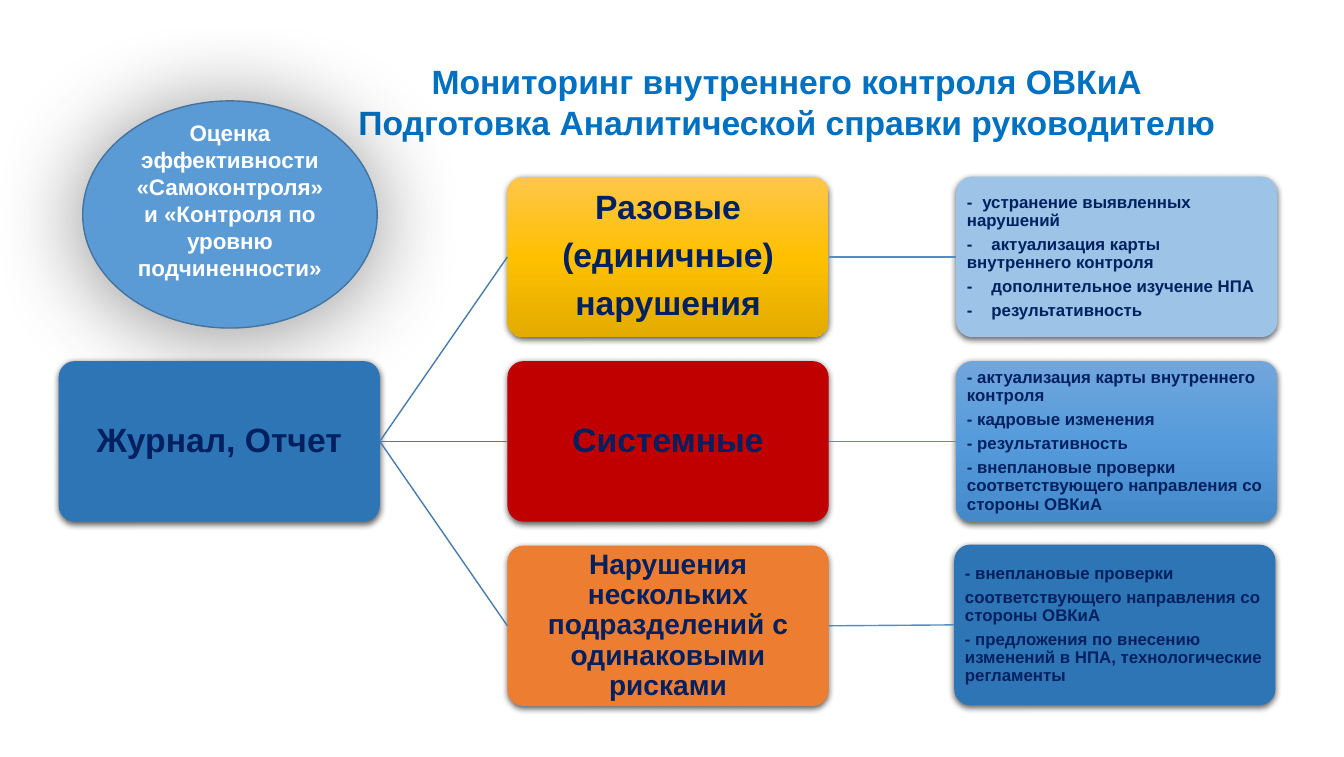
from dataclasses import dataclass

from lxml.etree import SubElement
from pptx import Presentation
from pptx.dml.color import RGBColor as RGB
from pptx.enum.shapes import MSO_CONNECTOR as LINK, MSO_SHAPE as SHAPE
from pptx.enum.text import MSO_ANCHOR as ANCHOR, PP_ALIGN as ALIGN
from pptx.oxml.ns import qn
from pptx.util import Pt


@dataclass(frozen=True)
class Theme:
    face: str = "Arial"
    head: str = "0070C0"
    ink: str = "002060"
    white: str = "FFFFFF"
    blue: str = "2E75B6"
    sky: str = "5B9BD5"
    rim: str = "43739E"
    pale: str = "9DC3E6"
    red: str = "C00000"
    orange: str = "ED7D31"
    gold: tuple = ("FFC64B", "FFC000", "E3AB00")
    azure: tuple = ("71A6DB", "559BDB", "448ACA")
    fork: str = "497CAB"
    link: str = "538DC1"
    big: int = 24
    mid: int = 20
    note: int = 16
    small: int = 12


LEFT, TOP = 41.8, 126
WIDE, HIGH = 229, 114.5
COL, ROW = 320, 131.6


def node(up, tag, **attrs):
    return SubElement(up, qn(tag), {key: str(val) for key, val in attrs.items()})


def write(frame, text, size, color, align=ALIGN.CENTER, line=None, after=0, tab=0):
    """Fill a text frame, one paragraph for each line of text."""
    frame.word_wrap = True
    frame.vertical_anchor = ANCHOR.MIDDLE
    for num, words in enumerate(text.split("\n")):
        para = frame.add_paragraph() if num else frame.paragraphs[0]
        if "\t" in words:
            # The first item has a narrower gap after its dash.
            stop = Pt(tab if num else 11)
            tabs = node(para._p.get_or_add_pPr(), "a:tabLst")
            node(tabs, "a:tab", pos=stop, algn="l")
        para.alignment = align
        if line:
            para.line_spacing = line
        if after:
            para.space_after = Pt(after)
        run = para.add_run()
        run.text = words
        font = run.font
        font.name, font.size, font.bold = theme.face, Pt(size), True
        font.color.rgb = RGB.from_string(color)


class Board:
    def __init__(self, theme, slide):
        self.theme, self.slide = theme, slide

    def title(self, text, x, y, w, h):
        box = self.slide.shapes.title
        box.left, box.top, box.width, box.height = map(Pt, (x, y, w, h))
        write(box.text_frame, text, self.theme.big, self.theme.head)

    def shape(self, kind, x, y, w, h, fill, shade):
        """Draw a shape; shade is alpha, blur, distance and angle."""
        item = self.slide.shapes.add_shape(kind, *map(Pt, (x, y, w, h)))
        item.line.fill.background()
        item.shadow.inherit = False
        props = item._element.spPr
        if isinstance(fill, tuple):
            item.fill.gradient()
            item.fill.gradient_angle = 270
            stops = props.find(".//" + qn("a:gsLst"))
            stops.clear()
            for num, color in enumerate(fill):
                stop = node(stops, "a:gs", pos=num * 50000)
                node(stop, "a:srgbClr", val=color)
        else:
            item.fill.solid()
            item.fill.fore_color.rgb = RGB.from_string(fill)
        alpha, blur, dist, angle = shade
        cast = node(props.find(qn("a:effectLst")), "a:outerShdw", blurRad=Pt(blur),
                    dist=Pt(dist), dir=angle * 60000, algn="ctr", rotWithShape=0)
        node(node(cast, "a:srgbClr", val="000000"), "a:alpha", val=alpha * 1000)
        return item

    def card(self, col, row, fill, text, size, dx=0, dy=0, **style):
        item = self.shape(SHAPE.ROUNDED_RECTANGLE, LEFT + col * COL + dx,
                          TOP + row * ROW + dy, WIDE, HIGH, fill, (63, 4.5, 1.5, 90))
        item.adjustments[0] = 0.1
        frame = item.text_frame
        frame.margin_left = frame.margin_right = Pt(4.3)
        frame.margin_top = frame.margin_bottom = Pt(4.3)
        write(frame, text, size, self.theme.ink, line=0.9, after=0.35 * size, **style)
        return item

    def oval(self, text, x, y, w, h):
        item = self.shape(SHAPE.OVAL, x, y, w, h, self.theme.sky, (43, 67, 4, 120))
        item.line.color.rgb = RGB.from_string(self.theme.rim)
        item.line.width = Pt(1)
        item.text_frame.margin_bottom = Pt(24)
        write(item.text_frame, text, self.theme.note, self.theme.white)

    def join(self, start, end, color):
        line = self.slide.shapes.add_connector(LINK.STRAIGHT, 0, 0, 0, 0)
        line.begin_connect(start, 3)
        line.end_connect(end, 1)
        line.line.color.rgb = RGB.from_string(color)
        line.line.width = Pt(1)
        node(line._element.spPr, "a:effectLst")


theme = Theme()


def main():
    deck = Presentation()
    deck.slide_width, deck.slide_height = Pt(958.3), Pt(540)
    board = Board(theme, deck.slides.add_slide(deck.slide_layouts[5]))

    board.title("Мониторинг внутреннего контроля ОВКиА\n"
                "Подготовка Аналитической справки руководителю", 203, 36, 716, 73)
    board.oval("Оценка эффективности «Самоконтроля» и «Контроля по уровню "
               "подчиненности»", 59, 72, 210, 162)
    journal = board.card(0, 1, theme.blue, "Журнал, Отчет", theme.big)

    rows = [
        (theme.gold, "Разовые\n(единичные)\nнарушения", theme.big, theme.pale,
         "-\tустранение выявленных нарушений\n"
         "-\tактуализация карты внутреннего контроля\n"
         "-\tдополнительное изучение НПА\n"
         "-\tрезультативность", 0, 0),
        (theme.red, "Системные", theme.big, theme.azure,
         "- актуализация карты внутреннего контроля\n"
         "- кадровые изменения\n"
         "- результативность\n"
         "- внеплановые проверки соответствующего направления со стороны ОВКиА", 0, 0),
        (theme.orange, "Нарушения нескольких подразделений с одинаковыми рисками",
         theme.mid, theme.blue,
         "- внеплановые проверки\n"
         "соответствующего направления со стороны ОВКиА\n"
         "- предложения по внесению изменений в НПА, технологические регламенты",
         -1.4, -0.7),
    ]
    for row, (fill, name, size, tint, steps, dx, dy) in enumerate(rows):
        kind = board.card(1, row, fill, name, size)
        action = board.card(2, row, tint, steps, theme.small, dx, dy,
                            align=ALIGN.LEFT, tab=17.5)
        board.join(journal, kind, theme.fork)
        board.join(kind, action, theme.link)

    deck.save("out.pptx")


if __name__ == "__main__":
    main()
